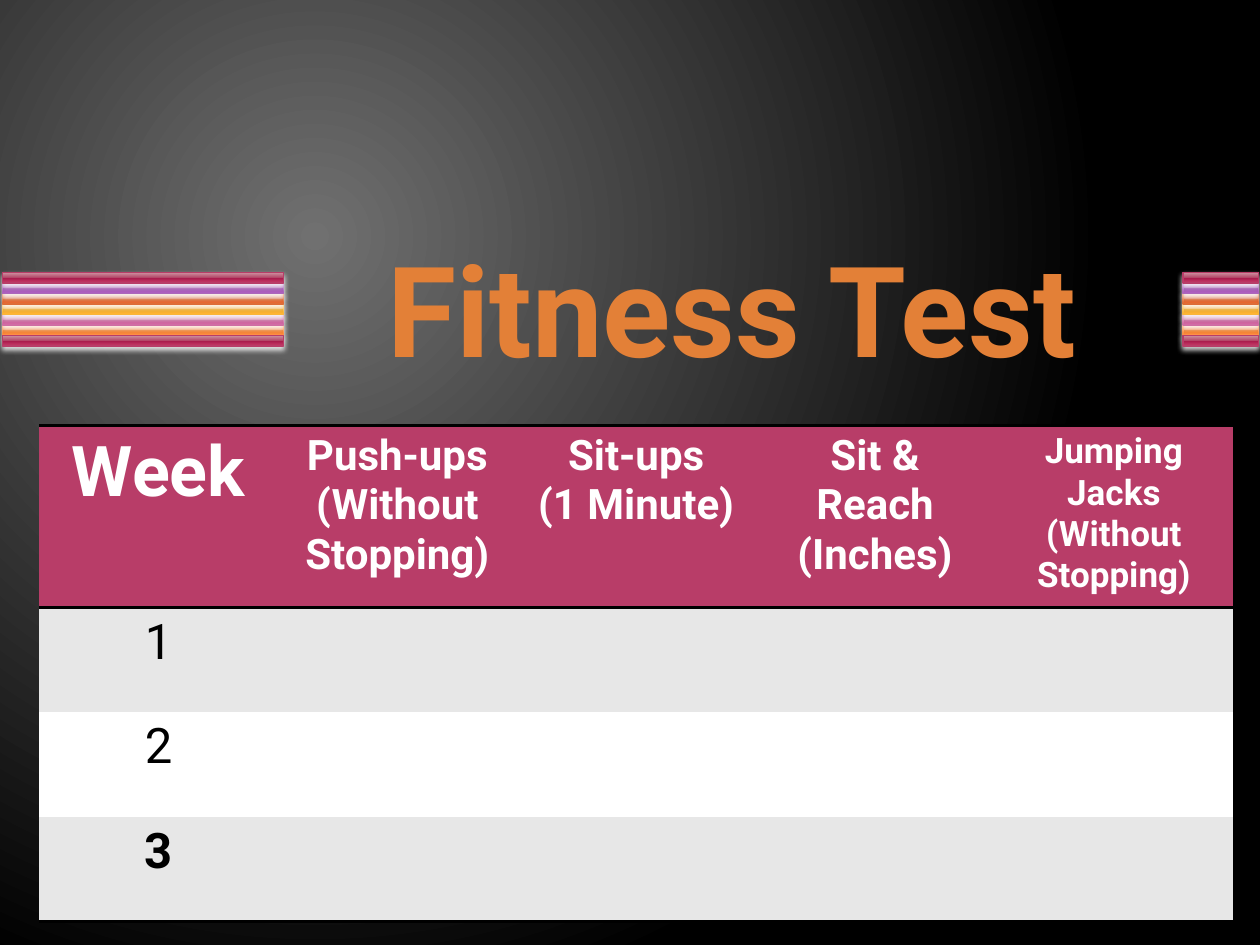
"""Build the Fitness Test slide: a title between striped ribbons above a weekly score table."""
import pptx
import pptx.dml.color
import pptx.enum.shapes
import pptx.enum.text
import pptx.oxml
import pptx.oxml.ns
import pptx.util
from lxml import etree

Pt = pptx.util.Pt
qn = pptx.oxml.ns.qn

TITLE = "Fitness Test"
HEADINGS = [
    (["Week"], 40),
    (["Push-ups", "(Without Stopping)"], 24),
    (["Sit-ups", "(1 Minute)"], 24),
    (["Sit & Reach", "(Inches)"], 24),
    (["Jumping Jacks", "(Without Stopping)"], 20),
]
WEEKS = [("1", False), ("2", False), ("3", True)]

MAGENTA = ("B83D68", ["CE94A2", "B34869", "A61749", "C13764", "CA5D7C"])
STRIPES = [
    MAGENTA,
    ("AC66BB", ["C6A2D0", "A666B4", "8F3EA1", "AD5DBF", "BA76CA"]),
    ("DE6C36", ["E7A493", "D66B42", "CC4809", "E9642C", "F07B55"]),
    ("F9B639", ["FBCC93", "EFAE43", "E59807", "FFB432", "FFBE5F"]),
    ("CF6DA4", ["DDA4C1", "C66B9D", "B34181", "D361A0", "DC79AE"]),
    ("FA8D3D", ["FBB494", "F08745", "E5670B", "FF8736", "FF9961"]),
    MAGENTA,
]
STRIPE_STOPS = [0, 49, 49, 92, 100]
RIBBONS = [(1.4, 160.6), (676, 43.2)]
RIBBON_TOP, STRIPE_HEIGHT = 155.7, 6

TITLE_BOX = (162, 22.3, 512.6, 306)
TABLE_LEFT, TABLE_TOP, COLUMN_WIDTH = 22.3, 242.9, 136.5
HEADER_HEIGHT, WEEK_HEIGHT = 104.4, 59.7

THEME = {
    "font": "Roboto", "title_size": 72, "week_size": 28,
    "title": "E38037", "header": "B83D68", "header_text": "FFFFFF",
    "week_text": "000000", "bands": ["E7E7E7", "FFFFFF"], "rule": "000000",
    "glow": "FFFFFF", "backdrop": ["707070", "000000"],
}


def rgb(code):
    return pptx.dml.color.RGBColor.from_string(code)


def add_xml(parent, tag, **attributes):
    return etree.SubElement(parent, qn(tag), {k: str(v) for k, v in attributes.items()})


def set_stops(gradient, positions, colors):
    for child in list(gradient):
        gradient.remove(child)
    stops = add_xml(gradient, "a:gsLst")
    for position, color in zip(positions, colors):
        stop = add_xml(stops, "a:gs", pos=position * 1000)
        add_xml(stop, "a:srgbClr", val=color)


def paint_backdrop(slide):
    slide.background.fill.gradient()
    gradient = slide._element.find(".//" + qn("a:gradFill"))
    set_stops(gradient, [0, 100], THEME["backdrop"])
    circle = add_xml(gradient, "a:path", path="circle")
    add_xml(circle, "a:fillToRect", l=50000, t=50000, r=100000, b=100000)


def add_stripe(ribbon, left, top, width, edge, colors):
    stripe = ribbon.shapes.add_shape(
        pptx.enum.shapes.MSO_SHAPE.RECTANGLE, Pt(left), Pt(top), Pt(width), Pt(STRIPE_HEIGHT))
    stripe.fill.gradient()
    properties = stripe._element.spPr
    gradient = properties.find(qn("a:gradFill"))
    set_stops(gradient, STRIPE_STOPS, colors)
    add_xml(gradient, "a:lin", ang=5400000, scaled=0)
    stripe.line.color.rgb = rgb(edge)
    stripe.line.width = Pt(0.9)
    stripe.shadow.inherit = False
    glow = add_xml(properties.find(qn("a:effectLst")), "a:outerShdw",
                   blurRad=Pt(3.1), dist=Pt(2), dir=5400000, rotWithShape=0)
    add_xml(add_xml(glow, "a:srgbClr", val=THEME["glow"]), "a:alpha", val=83000)


def add_ribbon(slide, left, width):
    ribbon = slide.shapes.add_group_shape()
    last = len(STRIPES) - 1
    for row in [*reversed(range(last)), last]:
        add_stripe(ribbon, left, RIBBON_TOP + row * STRIPE_HEIGHT, width, *STRIPES[row])


def write_line(paragraph, text, size, color, bold):
    paragraph.alignment = pptx.enum.text.PP_ALIGN.CENTER
    run = paragraph.add_run()
    run.text = text
    run.font.name = THEME["font"]
    run.font.size = Pt(size)
    run.font.bold = bold
    run.font.color.rgb = rgb(color)


def write_cell(cell, lines, size, color, bold):
    frame = cell.text_frame
    for number, text in enumerate(lines):
        paragraph = frame.add_paragraph() if number else frame.paragraphs[0]
        write_line(paragraph, text, size, color, bold)


def rule_cell(cell, sides):
    properties = cell._tc.get_or_add_tcPr()
    for place, side in enumerate(sides):
        border = etree.Element(qn(side), {"w": str(Pt(2))})
        add_xml(add_xml(border, "a:solidFill"), "a:srgbClr", val=THEME["rule"])
        properties.insert(place, border)


def fill_row(row, color, sides):
    for cell in row.cells:
        cell.fill.solid()
        cell.fill.fore_color.rgb = rgb(color)
        rule_cell(cell, sides)


def add_scores(slide):
    columns = len(HEADINGS)
    scores = slide.shapes.add_table(
        len(WEEKS) + 1, columns, Pt(TABLE_LEFT), Pt(TABLE_TOP), Pt(COLUMN_WIDTH * columns),
        Pt(HEADER_HEIGHT + WEEK_HEIGHT * len(WEEKS))).table
    scores._tbl.tblPr.find(qn("a:tableStyleId")).text = "{2D5ABB26-0587-4C30-8999-92F81FD0307C}"
    for column in scores.columns:
        column.width = Pt(COLUMN_WIDTH)
    header, *week_rows = scores.rows
    header.height = Pt(HEADER_HEIGHT)
    fill_row(header, THEME["header"], ["a:lnT", "a:lnB"])
    for cell, (lines, size) in zip(header.cells, HEADINGS):
        write_cell(cell, lines, size, THEME["header_text"], True)
    for number, (row, (week, bold)) in enumerate(zip(week_rows, WEEKS)):
        row.height = Pt(WEEK_HEIGHT)
        fill_row(row, THEME["bands"][number % 2], ["a:lnB"] if number == len(WEEKS) - 1 else [])
        write_cell(row.cells[0], [week], THEME["week_size"], THEME["week_text"], bold)


def add_title(slide):
    title = slide.shapes.title
    title.left, title.top, title.width, title.height = map(Pt, TITLE_BOX)
    title.text_frame.vertical_anchor = pptx.enum.text.MSO_ANCHOR.MIDDLE
    write_line(title.text_frame.paragraphs[0], TITLE, THEME["title_size"], THEME["title"], True)


def main():
    deck = pptx.Presentation()
    deck.slide_width, deck.slide_height = Pt(720), Pt(540)
    slide = deck.slides.add_slide(deck.slide_layouts[0])
    subtitle = slide.placeholders[1]._element
    subtitle.getparent().remove(subtitle)
    paint_backdrop(slide)
    for left, width in RIBBONS:
        add_ribbon(slide, left, width)
    add_title(slide)
    add_scores(slide)
    deck.save("out.pptx")


if __name__ == "__main__":
    main()
